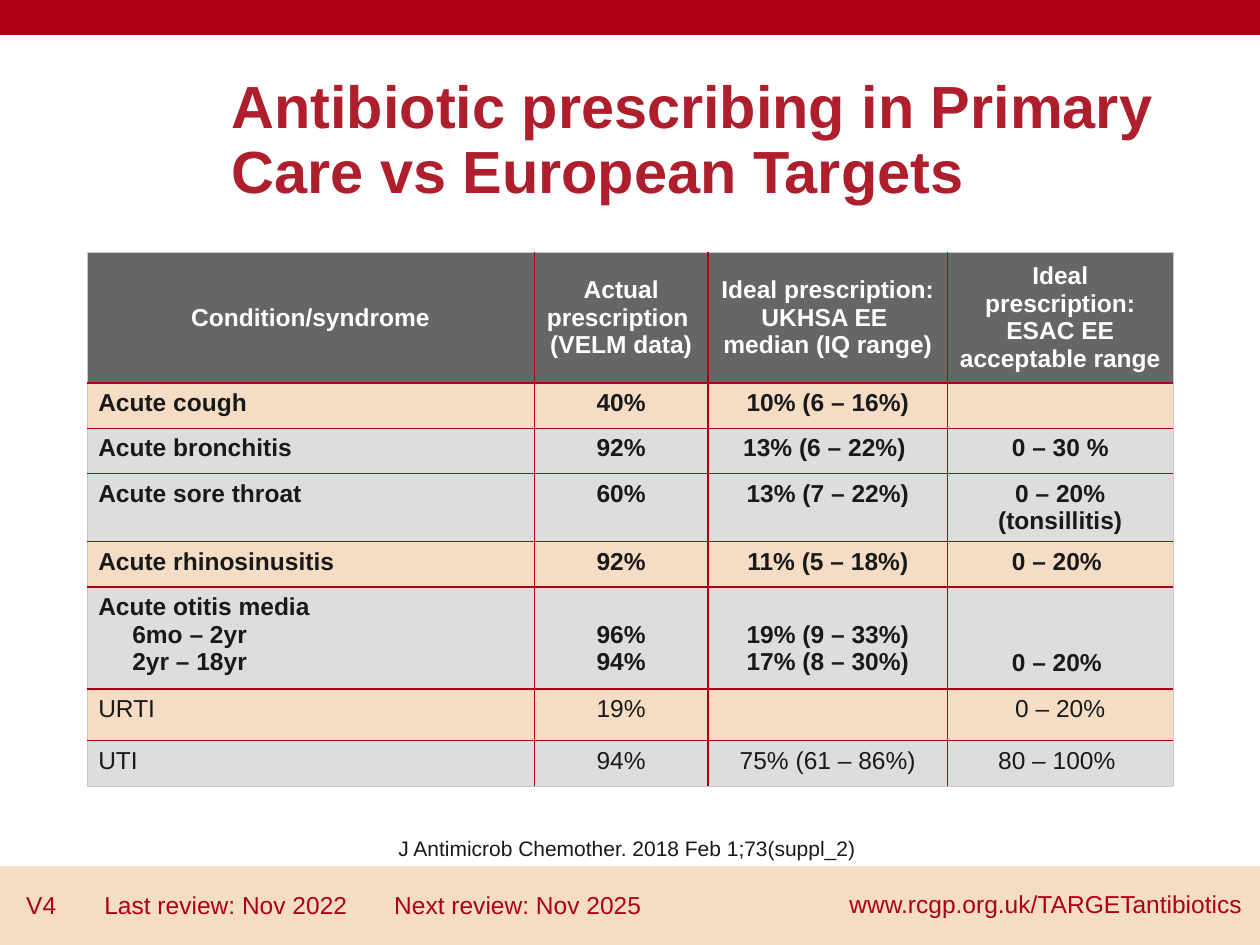
"""Build the slide comparing antibiotic prescribing in primary care with European targets."""
from dataclasses import dataclass

from lxml import etree
from pptx import Presentation
from pptx.dml.color import RGBColor
from pptx.enum import shapes, text
from pptx.oxml.ns import qn
from pptx.util import Inches, Pt

CRIMSON = RGBColor(0xAD, 0x00, 0x16)
TITLE_RED = RGBColor(0xAF, 0x1E, 0x2C)
PEACH = RGBColor(0xF4, 0xDD, 0xC4)
DARK_GREY = RGBColor(0x66, 0x66, 0x66)
LIGHT_GREY = RGBColor(0xDD, 0xDD, 0xDD)
EDGE_GREY = RGBColor(0xC8, 0xC8, 0xC8)
INK = RGBColor(0x19, 0x19, 0x19)
WHITE = RGBColor(0xFF, 0xFF, 0xFF)

LEFT, CENTER = text.PP_ALIGN.LEFT, text.PP_ALIGN.CENTER
TOP, MIDDLE = text.MSO_ANCHOR.TOP, text.MSO_ANCHOR.MIDDLE
LINE_HEIGHT = 0.22


@dataclass(frozen=True)
class Band:
    top: float
    height: float
    color: RGBColor


@dataclass(frozen=True)
class Label:
    at: tuple
    content: str
    size: int
    color: RGBColor
    bold: bool = False
    align: text.PP_ALIGN = CENTER
    anchor: text.MSO_ANCHOR = TOP
    spacing: float = 1.0
    tabs: tuple = ()


@dataclass(frozen=True)
class Row:
    height: float
    fill: RGBColor
    cells: tuple
    bold: bool = True
    header: bool = False


BANDS = (Band(6.88, 0.62, PEACH), Band(-0.01, 0.28, CRIMSON))

LABELS = (
    Label((1.74, 0.4, 7.57, 1.45), "Antibiotic prescribing in Primary Care vs European Targets",
          34, TITLE_RED, bold=True, align=LEFT, anchor=MIDDLE, spacing=0.9),
    Label((0.69, 6.58, 8.62, 0.3), "J Antimicrob Chemother. 2018 Feb 1;73(suppl_2) ", 12, INK),
    Label((0.11, 6.98, 5.12, 0.4), "V4\tLast review: Nov 2022\tNext review: Nov 2025",
          14, CRIMSON, align=LEFT, anchor=MIDDLE, tabs=(0.62, 2.92)),
    Label((6.63, 7.01, 3.34, 0.34), "www.rcgp.org.uk/TARGETantibiotics", 14, CRIMSON),
)

COLUMN_WIDTHS = (3.55, 1.38, 1.9, 1.79)
ROWS = (
    Row(1.04, DARK_GREY, (
        "Condition/syndrome",
        "Actual prescription \n(VELM data)",
        "Ideal prescription: UKHSA EE \nmedian (IQ range)",
        "Ideal prescription: ESAC EE\nacceptable range"), header=True),
    Row(0.36, PEACH, ("Acute cough", "40%", "10% (6 – 16%)", "")),
    Row(0.36, LIGHT_GREY, ("Acute bronchitis", "92%", "13% (6 – 22%) ", "0 – 30 %")),
    Row(0.54, LIGHT_GREY, ("Acute sore throat", "60%", "13% (7 – 22%)", "0 – 20% (tonsillitis)")),
    Row(0.36, PEACH, ("Acute rhinosinusitis", "92%", "11% (5 – 18%)", "0 – 20% ")),
    Row(0.81, LIGHT_GREY, ("Acute otitis media\n6mo – 2yr\n2yr – 18yr", "96%\n94%",
                           "19% (9 – 33%)\n17% (8 – 30%)", "0 – 20% ")),
    Row(0.41, PEACH, ("URTI", "19%", "", "0 – 20%"), bold=False),
    Row(0.36, LIGHT_GREY, ("UTI", "94%", "75% (61 – 86%)", "80 – 100% "), bold=False),
)


def write(para, content: str, size: int, color: RGBColor, bold: bool) -> None:
    span = para.add_run()
    span.text = content
    for name, value in {"name": "Arial", "size": Pt(size), "bold": bold}.items():
        setattr(span.font, name, value)
    span.font.color.rgb = color


def draw_band(page, band: Band) -> None:
    bar = page.shapes.add_shape(shapes.MSO_SHAPE.RECTANGLE, 0, Inches(band.top),
                                Inches(10), Inches(band.height))
    bar.shadow.inherit = False
    bar.fill.solid()
    bar.fill.fore_color.rgb = band.color
    bar.line.color.rgb = band.color
    bar.line.width = Pt(1)


def draw_label(page, label: Label) -> None:
    frame = page.shapes.add_textbox(*map(Inches, label.at)).text_frame
    frame.word_wrap = True
    frame.vertical_anchor = label.anchor
    para = frame.paragraphs[0]
    para.alignment = label.align
    para.line_spacing = label.spacing
    if label.tabs:
        stops = etree.SubElement(para._p.get_or_add_pPr(), qn("a:tabLst"))
        for stop in label.tabs:
            etree.SubElement(stops, qn("a:tab"), pos=str(Inches(stop)), algn="l")
    write(para, label.content, label.size, label.color, label.bold)


def draw_border(cell, side: str, inner: bool) -> None:
    width, color = (Pt(1), CRIMSON) if inner else (Pt(0.5), EDGE_GREY)
    line = etree.SubElement(cell._tc.get_or_add_tcPr(), qn(f"a:{side}"), w=str(width))
    fill = etree.SubElement(line, qn("a:solidFill"))
    etree.SubElement(fill, qn("a:srgbClr"), val=str(color))


def fill_cell(cell, row: Row, column: int, skipped_lines: int) -> None:
    margins = {"margin_left": 0.09, "margin_right": 0.09, "margin_bottom": 0.05,
               "margin_top": 0.05 + skipped_lines * LINE_HEIGHT}
    for name, value in margins.items():
        setattr(cell, name, Inches(value))
    cell.vertical_anchor = MIDDLE if row.header else TOP
    cell.fill.solid()
    cell.fill.fore_color.rgb = row.fill
    for number, content in enumerate(row.cells[column].split("\n")):
        frame = cell.text_frame
        para = frame.add_paragraph() if number else frame.paragraphs[0]
        para.alignment = CENTER if column or row.header else LEFT
        if number and not column:
            para._p.get_or_add_pPr().set("marL", str(Inches(0.27)))
        if content:
            write(para, content, 14, WHITE if row.header else INK, row.bold)
        else:
            etree.SubElement(para._p, qn("a:endParaRPr"), sz="1400")


def draw_table(page) -> None:
    height = sum(row.height for row in ROWS)
    table = page.shapes.add_table(len(ROWS), len(COLUMN_WIDTHS), Inches(0.69), Inches(2),
                                  Inches(sum(COLUMN_WIDTHS)), Inches(height)).table
    last_row, last_column = len(ROWS) - 1, len(COLUMN_WIDTHS) - 1
    for column, width in enumerate(COLUMN_WIDTHS):
        table.columns[column].width = Inches(width)
    for index, row in enumerate(ROWS):
        table.rows[index].height = Inches(row.height)
        label_lines = row.cells[0].count("\n")
        for column, content in enumerate(row.cells):
            cell = table.cell(index, column)
            inner_sides = {"lnL": column > 0, "lnR": column < last_column,
                           "lnT": index > 0, "lnB": index < last_row}
            for side, inner in inner_sides.items():
                draw_border(cell, side, inner)
            skipped = max(0, label_lines - content.count("\n"))
            fill_cell(cell, row, column, skipped)


def main() -> None:
    deck = Presentation()
    deck.slide_width, deck.slide_height = Inches(10), Inches(7.5)
    page = deck.slides.add_slide(deck.slide_layouts[6])
    for band in BANDS:
        draw_band(page, band)
    draw_table(page)
    for label in LABELS:
        draw_label(page, label)
    deck.save("out.pptx")


if __name__ == "__main__":
    main()
